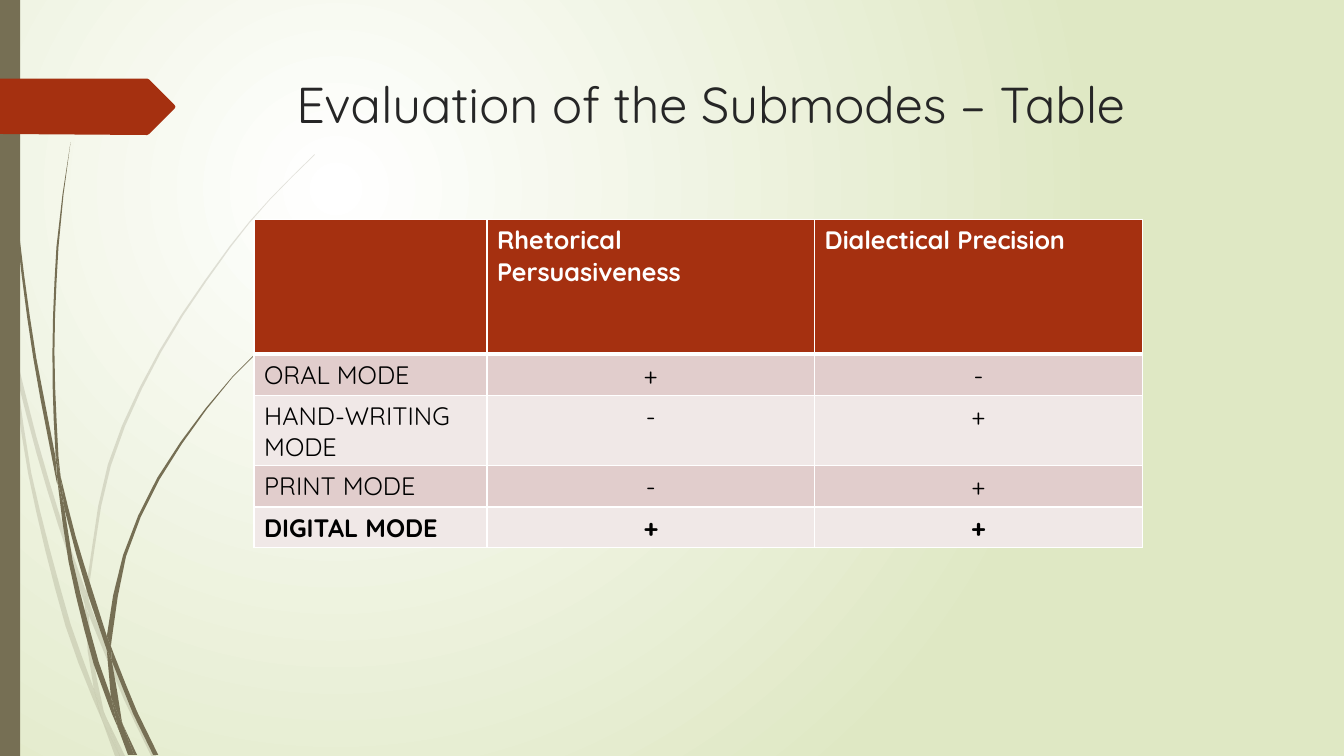
from dataclasses import dataclass
from math import hypot

from lxml.etree import SubElement as Sub
from pptx import Presentation
from pptx.dml.color import RGBColor
from pptx.enum.shapes import MSO_SHAPE as Kind
from pptx.enum.text import PP_ALIGN as Align
from pptx.oxml import parse_xml
from pptx.oxml.ns import nsdecls, qn

PX = 9144
FONT = "Quicksand"
OLIVE, RUST, WHITE, BLACK = "766F54", "A53010", "FFFFFF", "000000"
BANDS = ("E1CDCC", "F0E8E7")
STRIDE = 40
Point = tuple[float, float]


@dataclass
class Blade:
    left: list[Point]
    right: list[Point]


@dataclass
class Row:
    cells: tuple[str, str, str]
    high: int
    bold: bool = False


PALE = [
    Blade([(0, 282), (9, 322), (11, 350)], [(0, 299), (10, 344), (11, 350)]),
    Blade([(14, 345), (36, 433), (62, 520), (85, 586)],
          [(17, 376), (36, 449), (58, 522), (84, 599)]),
    Blade([(88, 596), (92, 607), (127, 692), (155, 750)],
          [(88, 610), (123, 694), (150, 750)]),
    Blade([(105, 711), (124, 750)], [(105, 711), (119, 750)]),
    Blade([(11, 350), (17, 376), (31, 469), (70, 619), (93, 683), (101, 714)],
          [(11, 350), (28, 470), (65, 621), (92, 693), (101, 714)]),
    Blade([(84, 599), (88, 610), (91, 646), (103, 706), (105, 711)],
          [(84, 599), (87, 646), (93, 683), (96, 692), (105, 711)]),
    Blade([(312, 153), (268, 197), (228, 244), (158, 348), (107, 461), (85, 586)],
          [(312, 154), (268, 198), (229, 245), (160, 349), (110, 462), (88, 584), (88, 596)]),
    Blade([(101, 714), (114, 750)], [(101, 714), (119, 750)]),
    Blade([(85, 586), (84, 599), (88, 608)], [(85, 586), (88, 596), (88, 610)]),
    Blade([(93, 683), (99, 707), (101, 714), (119, 750)],
          [(93, 683), (96, 692), (105, 711), (119, 750)]),
]
DARK = [
    Blade([(3, 0), (4, 48), (7, 110), (17, 233), (33, 355), (56, 477), (57, 481)],
          [(4, 0), (5, 48), (8, 109), (19, 232), (36, 355), (55, 453), (57, 481)]),
    Blade([(60, 472), (64, 505), (88, 592), (106, 645)],
          [(60, 472), (75, 532), (93, 590), (106, 631), (106, 645)]),
    Blade([(110, 641), (113, 649), (136, 706), (157, 749)],
          [(110, 641), (111, 656), (132, 708), (152, 749)]),
    Blade([(57, 477), (64, 505), (72, 556), (98, 657), (110, 691), (117, 722)],
          [(57, 477), (68, 557), (93, 659), (111, 708), (117, 722)]),
    Blade([(70, 141), (62, 193), (56, 245), (52, 349), (55, 449), (60, 472)],
          [(70, 141), (63, 193), (58, 245), (54, 349), (58, 453), (60, 472)]),
    Blade([(122, 719), (133, 749)], [(122, 719), (136, 749)]),
    Blade([(55, 449), (57, 477), (64, 505)], [(55, 449), (60, 472), (64, 505)]),
    Blade([(260, 344), (231, 373), (204, 405), (156, 474), (122, 551), (106, 631), (110, 641)],
          [(261, 344), (231, 374), (205, 406), (158, 476), (125, 552), (111, 633), (110, 641)]),
    Blade([(117, 722), (127, 749)], [(117, 722), (131, 749)]),
    Blade([(106, 645), (110, 691), (116, 706), (122, 719)],
          [(106, 645), (111, 656), (121, 716), (122, 719)]),
    Blade([(106, 631), (106, 645), (111, 656)], [(106, 631), (110, 641), (111, 656)]),
    Blade([(110, 691), (117, 722), (130, 749)],
          [(110, 691), (116, 706), (122, 719), (133, 749)]),
]
ARROW = [(0, 78), (146, 78), (148, 79), (173, 104), (174, 106),
         (173, 108), (148, 133), (146, 134), (0, 133)]
COLS = (231, 325, 325)
ROWS = [
    Row(("", "Rhetorical Persuasiveness", "Dialectical Precision"), 133, True),
    Row(("ORAL MODE", "+", "-"), 41),
    Row(("HAND-WRITING MODE", "-", "+"), 41),
    Row(("PRINT MODE", "-", "+"), 41),
    Row(("DIGITAL MODE", "+", "+"), 40, True),
]


def rgb(code: str) -> RGBColor:
    return RGBColor.from_string(code)


def write(frame, text: str, *, size: int, color: str, bold: bool = False, align=Align.LEFT) -> None:
    frame.word_wrap = True
    para = frame.paragraphs[0]
    para.alignment = align
    run = para.add_run()
    run.text = text
    font = run.font
    font.name, font.size, font.bold = FONT, size * 12700, bold
    font.color.rgb = rgb(color)


def smooth(knots: list[Point]) -> list[Point]:
    ways = []
    for i in range(len(knots)):
        a, b = knots[max(i - 1, 0)], knots[min(i + 1, len(knots) - 1)]
        size = hypot(b[0] - a[0], b[1] - a[1])
        ways.append(((b[0] - a[0]) / size, (b[1] - a[1]) / size))
    curve = [knots[0]]
    for p, q, u, v in zip(knots, knots[1:], ways, ways[1:]):
        span = hypot(q[0] - p[0], q[1] - p[1])
        reach, steps = span / 3, max(1, round(span / STRIDE))
        for step in range(1, steps + 1):
            t = step / steps
            s = 1 - t
            curve.append(tuple(
                s**3 * p[k] + 3 * s * s * t * (p[k] + reach * u[k])
                + 3 * s * t * t * (q[k] - reach * v[k]) + t**3 * q[k]
                for k in (0, 1)))
    return curve


def paint(shape, color: str, alpha: int = 100) -> None:
    shape.shadow.inherit = False
    shape.fill.solid()
    shape.fill.fore_color.rgb = rgb(color)
    shape.line.fill.background()
    if alpha < 100:
        tint = next(shape.element.iter(qn("a:srgbClr")))
        Sub(tint, qn("a:alpha"), val=str(alpha * 1000))


def trace(shapes, points: list[Point], color: str, alpha: int = 100) -> None:
    spots = [(round(x * PX), round(y * PX)) for x, y in points]
    pen = shapes.build_freeform(*spots[0], scale=1.0)
    pen.add_line_segments(spots[1:], close=True)
    paint(pen.convert_to_shape(), color, alpha)


def grow(shapes, blades: list[Blade], alpha: int) -> None:
    group = shapes.add_group_shape()
    for blade in blades:
        trace(group.shapes, smooth(blade.left) + smooth(blade.right)[::-1], OLIVE, alpha)


def edge(cell, top: int, base: int) -> None:
    props = cell._tc.get_or_add_tcPr()
    for spot, (side, width) in enumerate((("L", 1), ("R", 1), ("T", top), ("B", base))):
        props.insert(spot, parse_xml(
            f'<a:ln{side} {nsdecls("a")} w="{width * 12700}"><a:solidFill>'
            f'<a:srgbClr val="{WHITE}"/></a:solidFill></a:ln{side}>'))


def add_modes(shapes) -> None:
    high = sum(row.high for row in ROWS)
    table = shapes.add_table(len(ROWS), len(COLS), 252 * PX, 218 * PX,
                             sum(COLS) * PX, high * PX).table
    for col, wide in zip(table.columns, COLS):
        col.width = wide * PX
    for r, row in enumerate(ROWS):
        table.rows[r].height = row.high * PX
        for c, text in enumerate(row.cells):
            cell = table.cell(r, c)
            cell.fill.solid()
            cell.fill.fore_color.rgb = rgb(BANDS[(r - 1) % 2] if r else RUST)
            edge(cell, 3 if r == 1 else 1, 1 if r else 3)
            if text:
                write(cell.text_frame, text, size=18, color=BLACK if r else WHITE,
                      bold=row.bold, align=Align.CENTER if r and c else Align.LEFT)


def main() -> None:
    deck = Presentation()
    deck.slide_width, deck.slide_height = 1333 * PX, 750 * PX
    slide = deck.slides.add_slide(deck.slide_layouts[6])
    slide.element.cSld.insert(0, parse_xml(
        f'<p:bg {nsdecls("p", "a")}><p:bgPr><a:gradFill rotWithShape="1"><a:gsLst>'
        f'<a:gs pos="0"><a:srgbClr val="{WHITE}"/></a:gs>'
        '<a:gs pos="100000"><a:srgbClr val="DFE8C4"/></a:gs></a:gsLst>'
        '<a:path path="circle"><a:fillToRect l="50000" t="50000" r="100000" b="100000"/>'
        '</a:path></a:gradFill><a:effectLst/></p:bgPr></p:bg>'))
    shapes = slide.shapes
    grow(shapes, PALE, 20)
    grow(shapes, DARK, 100)
    paint(shapes.add_shape(Kind.RECTANGLE, 0, 0, 20 * PX, 750 * PX), OLIVE)
    trace(shapes, ARROW, RUST)
    title = shapes.add_textbox(284 * PX, 68 * PX, 975 * PX, 140 * PX)
    write(title.text_frame, "Evaluation of the Submodes – Table", size=36, color="262626")
    add_modes(shapes)
    deck.save("out.pptx")


if __name__ == "__main__":
    main()
